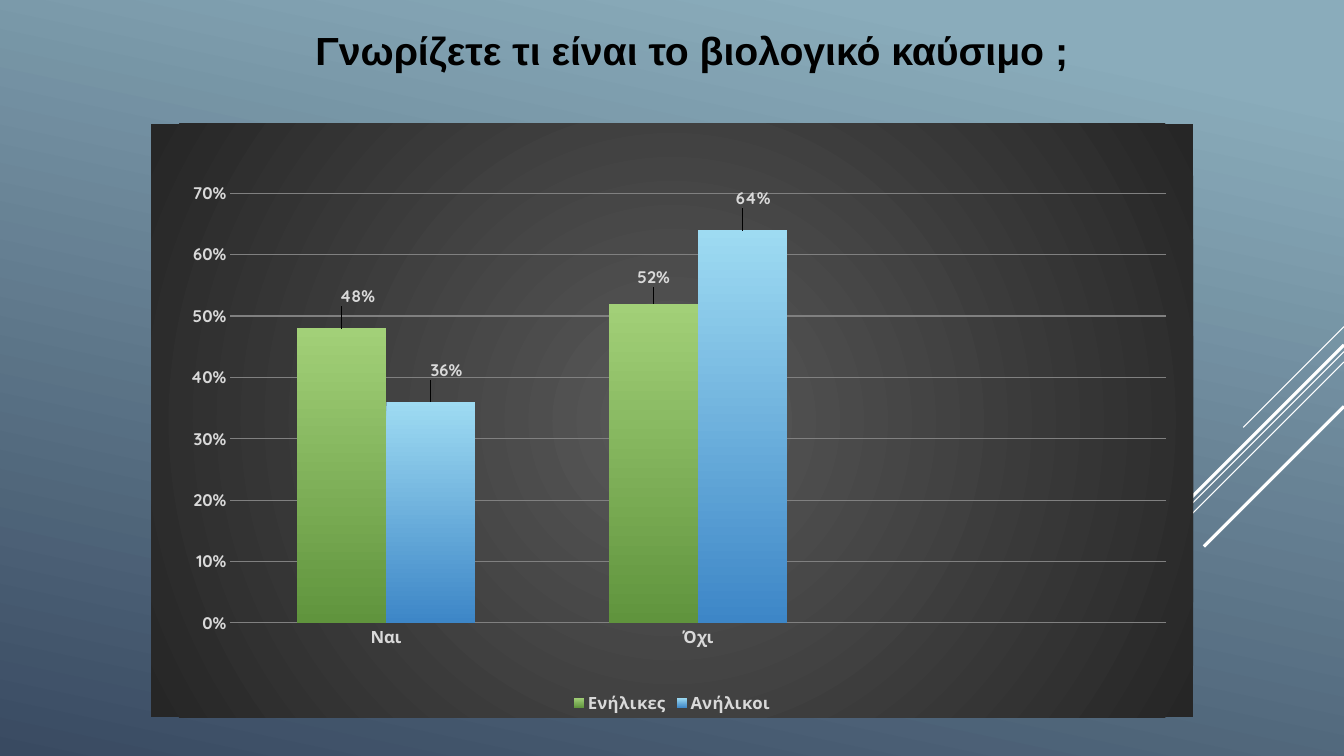
"""Build a slide with a column chart of adults' and minors' answers about biofuel."""
from lxml import etree
from pptx import Presentation
from pptx.chart.data import CategoryChartData
from pptx.dml.color import RGBColor
from pptx.enum.chart import XL_CHART_TYPE as ChartType
from pptx.enum.chart import XL_LABEL_POSITION as LabelPosition
from pptx.enum.chart import XL_LEGEND_POSITION as LegendPosition
from pptx.enum.chart import XL_TICK_MARK as TickMark
from pptx.enum.shapes import MSO_CONNECTOR as Connector
from pptx.enum.text import MSO_AUTO_SIZE as AutoSize
from pptx.oxml import parse_xml
from pptx.oxml.ns import nsdecls, qn
from pptx.util import Cm, Pt

BLACK = RGBColor(0x00, 0x00, 0x00)
WHITE = RGBColor(0xFF, 0xFF, 0xFF)
PALE_GREY = RGBColor(0xD9, 0xD9, 0xD9)
GRID_GREY = RGBColor(0x80, 0x80, 0x80)
PANEL_CENTRE = RGBColor(0x59, 0x59, 0x59)
PANEL_EDGE = RGBColor(0x26, 0x26, 0x26)
SKY = RGBColor(0x8A, 0xAC, 0xBB)
NAVY = RGBColor(0x39, 0x4A, 0x61)
LIGHT_GREEN = RGBColor(0xA2, 0xD0, 0x78)
GREEN = RGBColor(0x60, 0x94, 0x3D)
LIGHT_BLUE = RGBColor(0x9E, 0xDB, 0xF2)
BLUE = RGBColor(0x3D, 0x86, 0xC7)
SLIDE_WIDTH, SLIDE_HEIGHT = 33.87, 19.05


def paint_gradient(fill, first, last, angle, start=0):
    fill.gradient()
    fill.gradient_angle = angle
    for stop, color, position in zip(fill.gradient_stops, (first, last), (start, 1)):
        stop.color.rgb = color
        stop.position = position


def style_font(font, size=12, color=PALE_GREY, name="Quicksand"):
    font.size, font.bold, font.name = Pt(size), True, name
    font.color.rgb = color


deck = Presentation()
deck.slide_width, deck.slide_height = Cm(SLIDE_WIDTH), Cm(SLIDE_HEIGHT)
slide = deck.slides.add_slide(deck.slide_layouts[6])
paint_gradient(slide.background.fill, SKY, NAVY, 258, start=0.1)

streaks = [(8.23, 2.54, 0.75), (8.86, 8.28, 0.75), (9.12, 5.26, 0.75),
           (8.69, 4.85, 2.25), (10.24, 3.53, 2.25)]
for top, reach, weight in streaks:
    streak = slide.shapes.add_connector(
        Connector.STRAIGHT, Cm(SLIDE_WIDTH), Cm(top), Cm(SLIDE_WIDTH - reach), Cm(top + reach))
    streak.line.color.rgb = WHITE
    streak.line.width = Pt(weight)
    etree.SubElement(streak.element.spPr, qn("a:effectLst"))

answers = CategoryChartData(number_format="0%")
answers.categories = ["Ναι", "Όχι", ""]
answers.add_series("Ενήλικες", (0.48, 0.52, None))
answers.add_series("Ανήλικοι", (0.36, 0.64, None))
chart = slide.shapes.add_chart(
    ChartType.COLUMN_CLUSTERED, Cm(3.81), Cm(3.12), Cm(26.26), Cm(14.96), answers).chart
chart.has_title = False
style_font(chart.font, 10, WHITE)

chart.element.find(qn("c:chart")).addnext(parse_xml(
    f'<c:spPr {nsdecls("c", "a")}><a:gradFill><a:gsLst>'
    f'<a:gs pos="0"><a:srgbClr val="{PANEL_CENTRE}"/></a:gs>'
    f'<a:gs pos="100000"><a:srgbClr val="{PANEL_EDGE}"/></a:gs></a:gsLst>'
    '<a:path path="circle"><a:fillToRect l="50000" t="50000" r="50000" b="50000"/></a:path>'
    '</a:gradFill><a:ln><a:noFill/></a:ln></c:spPr>'))

plot_area = chart.element.find(f'{qn("c:chart")}/{qn("c:plotArea")}')
for layout in plot_area.findall(qn("c:layout")):
    plot_area.remove(layout)
plot_area.insert(0, parse_xml(
    f'<c:layout {nsdecls("c")}><c:manualLayout><c:layoutTarget val="inner"/>'
    '<c:xMode val="edge"/><c:yMode val="edge"/><c:x val="0.076"/><c:y val="0.117"/>'
    '<c:w val="0.898"/><c:h val="0.724"/></c:manualLayout></c:layout>'))

for axis in (chart.category_axis, chart.value_axis):
    axis.major_tick_mark = axis.minor_tick_mark = TickMark.NONE
    axis.format.line.fill.background()
    style_font(axis.tick_labels.font)
scale = chart.value_axis
scale.minimum_scale, scale.maximum_scale, scale.major_unit = 0, 0.7, 0.1
scale.tick_labels.number_format = "0%"
scale.tick_labels.number_format_is_linked = False
scale.major_gridlines.format.line.color.rgb = GRID_GREY
scale.major_gridlines.format.line.width = Pt(0.75)

chart.has_legend = True
chart.legend.position = LegendPosition.BOTTOM
chart.legend.include_in_layout = False
style_font(chart.legend.font)

plot = chart.plots[0]
plot.vary_by_categories = False
plot.gap_width, plot.overlap = 150, 0
shades = [(LIGHT_GREEN, GREEN), (LIGHT_BLUE, BLUE)]
label_shifts = [[(0.015, -0.03), (0, -0.02)], [(0.015, -0.03), (0.01, -0.03)]]
for series, (light, dark), shifts in zip(plot.series, shades, label_shifts):
    paint_gradient(series.format.fill, light, dark, 270)
    labels = series.data_labels
    labels.show_value = True
    labels.number_format, labels.number_format_is_linked = "0%", False
    labels.position = LabelPosition.OUTSIDE_END
    style_font(labels.font)
    for index, (right, down) in enumerate(shifts):
        label = series.points[index].data_label
        label.position = LabelPosition.OUTSIDE_END
        style_font(label.font)
        mark = labels._element.findall(qn("c:dLbl"))[index]
        mark.find(qn("c:idx")).addnext(parse_xml(
            f'<c:layout {nsdecls("c")}><c:manualLayout><c:x val="{right}"/>'
            f'<c:y val="{down}"/></c:manualLayout></c:layout>'))

title = slide.shapes.add_textbox(Cm(7.7), Cm(0.53), Cm(19.58), Cm(1.45))
title.text_frame.word_wrap = False
title.text_frame.auto_size = AutoSize.SHAPE_TO_FIT_TEXT
para = title.text_frame.paragraphs[0]
para.text = "Γνωρίζετε τι είναι το βιολογικό καύσιμο ;"
style_font(para.font, 28, BLACK, "Arial")

deck.save("out.pptx")
